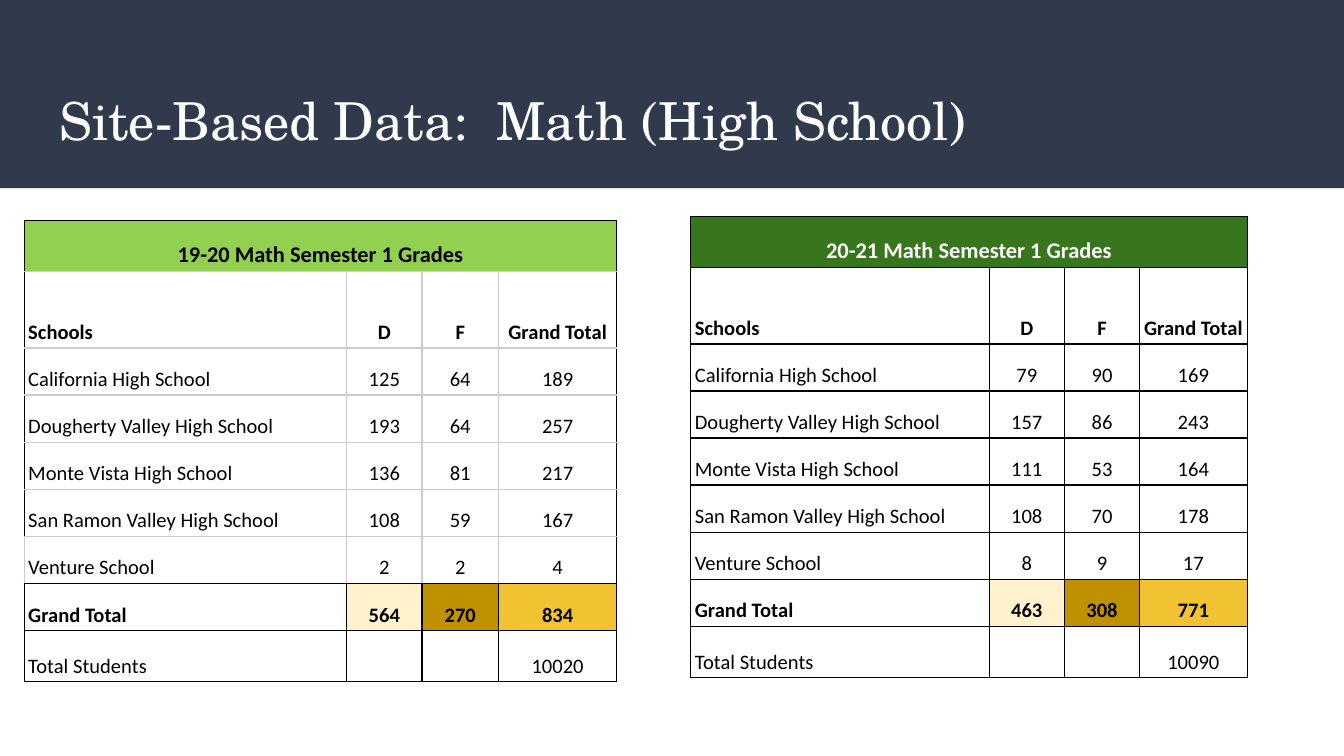
from dataclasses import dataclass

from lxml import etree
from pptx import Presentation
from pptx.dml.color import RGBColor
from pptx.enum.shapes import MSO_SHAPE
from pptx.enum.text import MSO_ANCHOR, PP_ALIGN
from pptx.oxml.ns import qn
from pptx.util import Inches, Pt

RECTANGLE = MSO_SHAPE.RECTANGLE
MIDDLE, BOTTOM = MSO_ANCHOR.MIDDLE, MSO_ANCHOR.BOTTOM
LEFT, CENTER = PP_ALIGN.LEFT, PP_ALIGN.CENTER

SLIDE_WIDTH = Inches(10)
SLIDE_HEIGHT = SLIDE_WIDTH * 9 // 16
NAVY, WHITE, BLACK, GREY = "31394D", "FFFFFF", "000000", "CCCCCC"
TOTAL_FILLS = {1: "FFF2CC", 2: "BF9000", 3: "F1C232"}
HEADING_ROW, LABEL_ROW, LAST_SCHOOL_ROW, TOTAL_ROW = 0, 1, 6, 7
LAST_COLUMN = 3
ROW_HEIGHTS = [0.38, 0.57] + [0.35] * 6 + [0.38]
SCHOOLS = [
    "California High School",
    "Dougherty Valley High School",
    "Monte Vista High School",
    "San Ramon Valley High School",
    "Venture School",
]


@dataclass
class GradeTable:
    heading: str
    left: float
    top: float
    column_widths: list[float]
    heading_fill: str
    heading_color: str
    grid_color: str
    grades: list[tuple[int, int]]
    students: int


GRADE_TABLES = [
    GradeTable("19-20 Math Semester 1 Grades", 0.18, 1.64, [2.4, 0.56, 0.57, 0.88],
               "92D050", BLACK, GREY,
               [(125, 64), (193, 64), (136, 81), (108, 59), (2, 2)], 10020),
    GradeTable("20-21 Math Semester 1 Grades", 5.14, 1.61, [2.22, 0.56, 0.56, 0.8],
               "38761D", WHITE, BLACK,
               [(79, 90), (157, 86), (111, 53), (108, 70), (8, 9)], 10090),
]


def rgb(color: str) -> RGBColor:
    return RGBColor.from_string(color)


def table_rows(grades: GradeTable) -> list[list]:
    """Return the cell values, with the totals added up."""
    d_total = sum(d for d, _ in grades.grades)
    f_total = sum(f for _, f in grades.grades)
    return [
        [grades.heading, "", "", ""],
        ["Schools", "D", "F", "Grand Total"],
        *([school, d, f, d + f] for school, (d, f) in zip(SCHOOLS, grades.grades)),
        ["Grand Total", d_total, f_total, d_total + f_total],
        ["Total Students", "", "", grades.students],
    ]


def border_colors(row: int, column: int, grid_color: str) -> dict[str, str]:
    """Return side colours: black outside and around totals, grid colour elsewhere."""
    totals = row >= TOTAL_ROW
    heading = row == HEADING_ROW
    black_sides = {
        "L": totals or (column == 0 and row < LAST_SCHOOL_ROW),
        "R": totals or heading or column == LAST_COLUMN,
        "T": totals or heading,
        "B": totals or row == LAST_SCHOOL_ROW,
    }
    return {side: BLACK if black else grid_color for side, black in black_sides.items()}


def set_borders(cell, colors: dict[str, str]) -> None:
    properties = cell._tc.get_or_add_tcPr()
    for position, (side, color) in enumerate(colors.items()):
        line = etree.Element(qn(f"a:ln{side}"), w=str(Pt(0.75)))
        fill = etree.SubElement(line, qn("a:solidFill"))
        etree.SubElement(fill, qn("a:srgbClr"), val=color)
        properties.insert(position, line)


def set_fill(cell, color: str | None) -> None:
    if color:
        cell.fill.solid()
        cell.fill.fore_color.rgb = rgb(color)
    else:
        cell.fill.background()


def write_cell(cell, text: str, size: float, color: str, bold: bool, align) -> None:
    cell.margin_left = cell.margin_right = Inches(0.03)
    cell.margin_top = cell.margin_bottom = Inches(0.02)
    cell.vertical_anchor = BOTTOM
    cell.text = text
    paragraph = cell.text_frame.paragraphs[0]
    paragraph.alignment = align
    paragraph.line_spacing = 1.15
    paragraph.font.name = "Calibri"
    paragraph.font.size = Pt(size)
    paragraph.font.bold = bold
    paragraph.font.color.rgb = rgb(color)


def draw_grade_table(slide, grades: GradeTable) -> None:
    rows = table_rows(grades)
    frame = slide.shapes.add_table(
        len(rows), len(grades.column_widths), Inches(grades.left), Inches(grades.top),
        Inches(sum(grades.column_widths)), Inches(sum(ROW_HEIGHTS)))
    table = frame.table
    table.first_row = table.horz_banding = False
    for column, width in zip(table.columns, grades.column_widths):
        column.width = Inches(width)
    for row, height in zip(table.rows, ROW_HEIGHTS):
        row.height = Inches(height)
    table.cell(HEADING_ROW, 0).merge(table.cell(HEADING_ROW, LAST_COLUMN))

    for r, values in enumerate(rows):
        heading = r == HEADING_ROW
        for c, value in enumerate(values):
            cell = table.cell(r, c)
            write_cell(cell, str(value), 12 if heading else 11,
                       grades.heading_color if heading else BLACK,
                       r in (HEADING_ROW, LABEL_ROW, TOTAL_ROW),
                       CENTER if heading or c > 0 else LEFT)
            set_borders(cell, border_colors(r, c, grades.grid_color))
            total_fill = TOTAL_FILLS.get(c) if r == TOTAL_ROW else None
            set_fill(cell, grades.heading_fill if heading else total_fill)


def draw_title_band(slide) -> None:
    band = slide.shapes.add_shape(RECTANGLE, 0, 0, SLIDE_WIDTH, Inches(1.4))
    band.shadow.inherit = False
    band.fill.solid()
    band.fill.fore_color.rgb = rgb(NAVY)
    band.line.fill.background()
    title = slide.shapes.title
    title._element.addprevious(band._element)


def write_title(slide, text: str) -> None:
    title = slide.shapes.title
    title.left, title.top = Inches(0.34), Inches(0.55)
    title.width, title.height = Inches(9.32), Inches(0.68)
    frame = title.text_frame
    frame.text = text
    frame.vertical_anchor = MIDDLE
    frame.margin_left = frame.margin_right = Inches(0.1)
    frame.margin_top = frame.margin_bottom = Inches(0.1)
    paragraph = frame.paragraphs[0]
    paragraph.alignment = LEFT
    paragraph.font.name = "TeX Gyre Schola"
    paragraph.font.size = Pt(28)
    paragraph.font.color.rgb = rgb(WHITE)


def main() -> None:
    deck = Presentation()
    deck.slide_width, deck.slide_height = SLIDE_WIDTH, SLIDE_HEIGHT
    slide = deck.slides.add_slide(deck.slide_layouts[5])
    draw_title_band(slide)
    write_title(slide, "Site-Based Data:  Math (High School)")
    for grades in GRADE_TABLES:
        draw_grade_table(slide, grades)
    deck.save("out.pptx")


if __name__ == "__main__":
    main()
